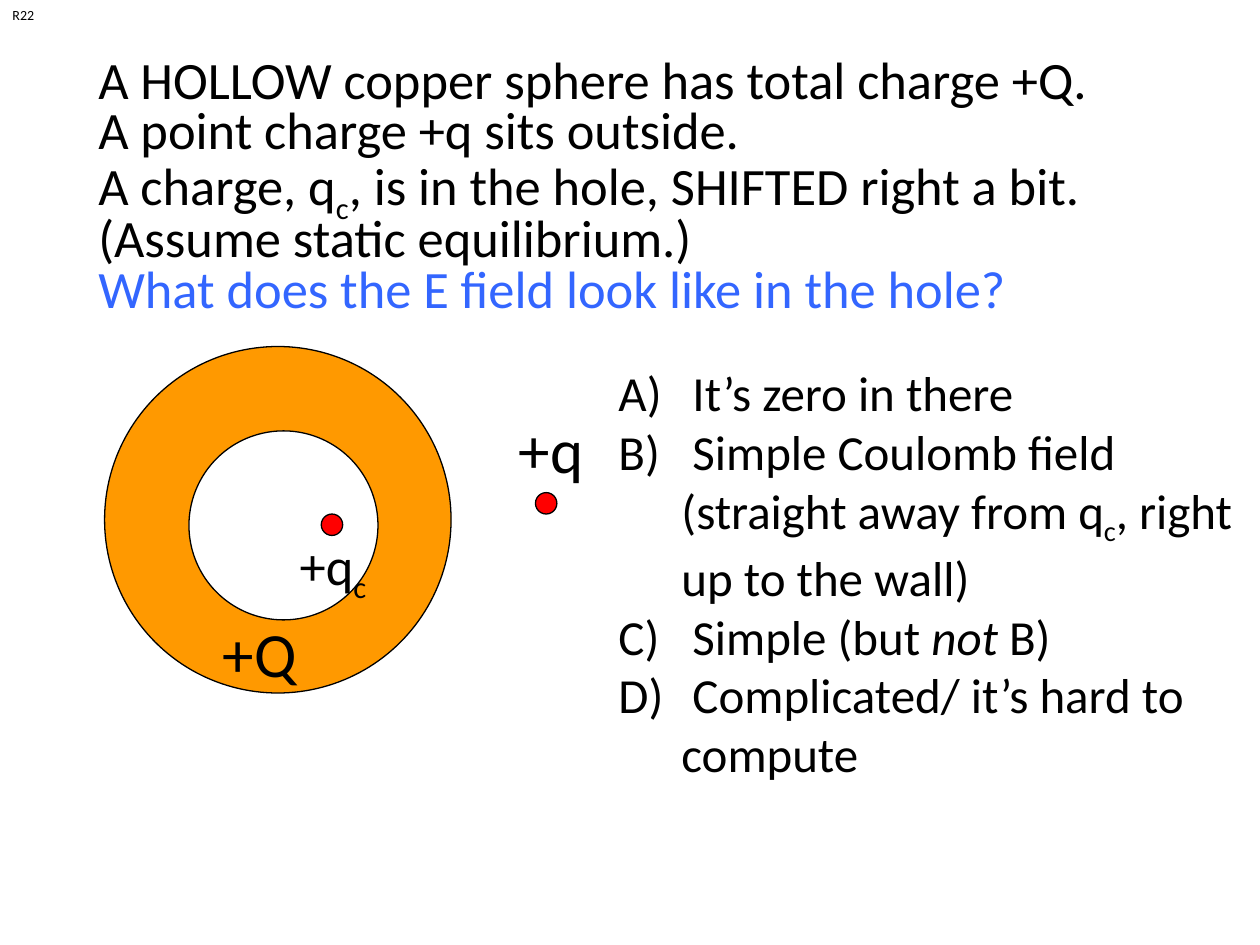
import pptx
import pptx.dml.color
import pptx.enum.shapes
import pptx.enum.text
import pptx.oxml
import pptx.util
from pptx.util import Inches


def color(hex_string):
    return pptx.dml.color.RGBColor.from_string(hex_string)


class SlideBuilder:
    """Holds the style and the current slide."""
    FONT = "Calibri"
    TEXT, QUESTION = "000000", "3366FF"
    COPPER, HOLE, CHARGE = "FF9900", "FFFFFF", "FF0000"

    def __init__(self, slide):
        self.s = slide

    def run(self, p, text, size, hex_string=TEXT, sub=False, italic=False):
        r = p.add_run()
        r.text = text
        r.font.name = self.FONT
        r.font.size = pptx.util.Pt(size)
        r.font.color.rgb = color(hex_string)
        if italic:
            r.font.italic = True
        if sub:
            r.font._element.set("baseline", "-25000")

    def paragraphs(self, tf, rows, size):
        """Each row is a list of (text, run options) pairs."""
        for i, row in enumerate(rows):
            p = tf.paragraphs[0] if i == 0 else tf.add_paragraph()
            for text, options in row:
                self.run(p, text, size, **options)
        return tf.paragraphs

    def indent(self, p, left, first, bullet):
        pPr = p._p.get_or_add_pPr()
        pPr.set("marL", str(Inches(left)))
        pPr.set("indent", str(Inches(first)))
        ns = "http://schemas.openxmlformats.org/drawingml/2006/main"
        pPr.append(pptx.oxml.parse_xml(bullet.replace("/>", f' xmlns:a="{ns}"/>')))

    def body(self, x, y, w, h, rows, size):
        sp = self.s.placeholders[1]
        sp.left, sp.top, sp.width, sp.height = map(Inches, (x, y, w, h))
        tf = sp.text_frame
        tf.auto_size = pptx.enum.text.MSO_AUTO_SIZE.NONE
        for p in self.paragraphs(tf, rows, size):
            p.line_spacing = 0.8
            p.space_before = pptx.util.Pt(0)
            self.indent(p, 0, 0, "<a:buNone/>")

    def text(self, x, y, w, h, rows, size, wrap=False):
        sp = self.s.shapes.add_textbox(*map(Inches, (x, y, w, h)))
        tf = sp.text_frame
        tf.word_wrap = wrap
        tf.auto_size = pptx.enum.text.MSO_AUTO_SIZE.SHAPE_TO_FIT_TEXT
        return self.paragraphs(tf, rows, size)

    def choices(self, x, y, w, h, rows, size):
        for p in self.text(x, y, w, h, rows, size, wrap=True):
            self.indent(p, 0.5, -0.5, '<a:buAutoNum type="alphaUcParenR"/>')

    def circle(self, x, y, d, fill):
        sp = self.s.shapes.add_shape(pptx.enum.shapes.MSO_SHAPE.OVAL,
                                     *map(Inches, (x, y, d, d)))
        sp.shadow.inherit = False
        sp.fill.solid()
        sp.fill.fore_color.rgb = color(fill)
        sp.line.color.rgb = color(self.TEXT)
        sp.line.width = pptx.util.Pt(0.75)


def main():
    prs = pptx.Presentation()
    prs.slide_width, prs.slide_height = Inches(10), Inches(7.5)
    s = prs.slides.add_slide(prs.slide_layouts[1])
    title = s.shapes.title._element
    title.getparent().remove(title)
    b = SlideBuilder(s)
    sub = {"sub": True}

    # Problem statement
    b.body(0.68, 0.42, 9.32, 2.25, [
        [("A HOLLOW copper sphere has total charge +Q.", {})],
        [("A point charge +q sits outside.", {})],
        [("A charge, q", {}), ("c", sub),
         (", is in the hole, SHIFTED right a bit.", {})],
        [("(Assume static equilibrium.)", {})],
        [("What does the E field look like in the hole?",
          {"hex_string": b.QUESTION})],
    ], 30)

    # Answer choices
    b.choices(4.81, 2.83, 5.11, 3.4, [
        [(" It’s zero in there", {})],
        [(" Simple Coulomb field (straight away from q", {}), ("c", sub),
         (", right up to the wall)", {})],
        [(" Simple (but ", {}), ("not", {"italic": True}), (" B)", {})],
        [(" Complicated/ it’s hard to compute", {})],
    ], 28)

    # Hollow sphere, then the charges inside and outside
    b.circle(0.83, 2.75, 2.75, b.COPPER)
    b.circle(1.5, 3.42, 1.5, b.HOLE)
    for x, y in [(2.55, 4.08), (4.25, 3.91)]:
        b.circle(x, y, 0.17, b.CHARGE)

    # Charge labels and slide code
    b.text(4.02, 3.21, 0.77, 0.7, [[("+q", {})]], 36)
    b.text(1.67, 4.83, 0.88, 0.7, [[("+Q", {})]], 36)
    b.text(2.28, 4.18, 0.82, 0.6, [[("+q", {}), ("c", sub)]], 30)
    b.text(0, 0, 0.38, 0.24, [[("R22", {})]], 8)

    prs.save("out.pptx")


if __name__ == "__main__":
    main()
